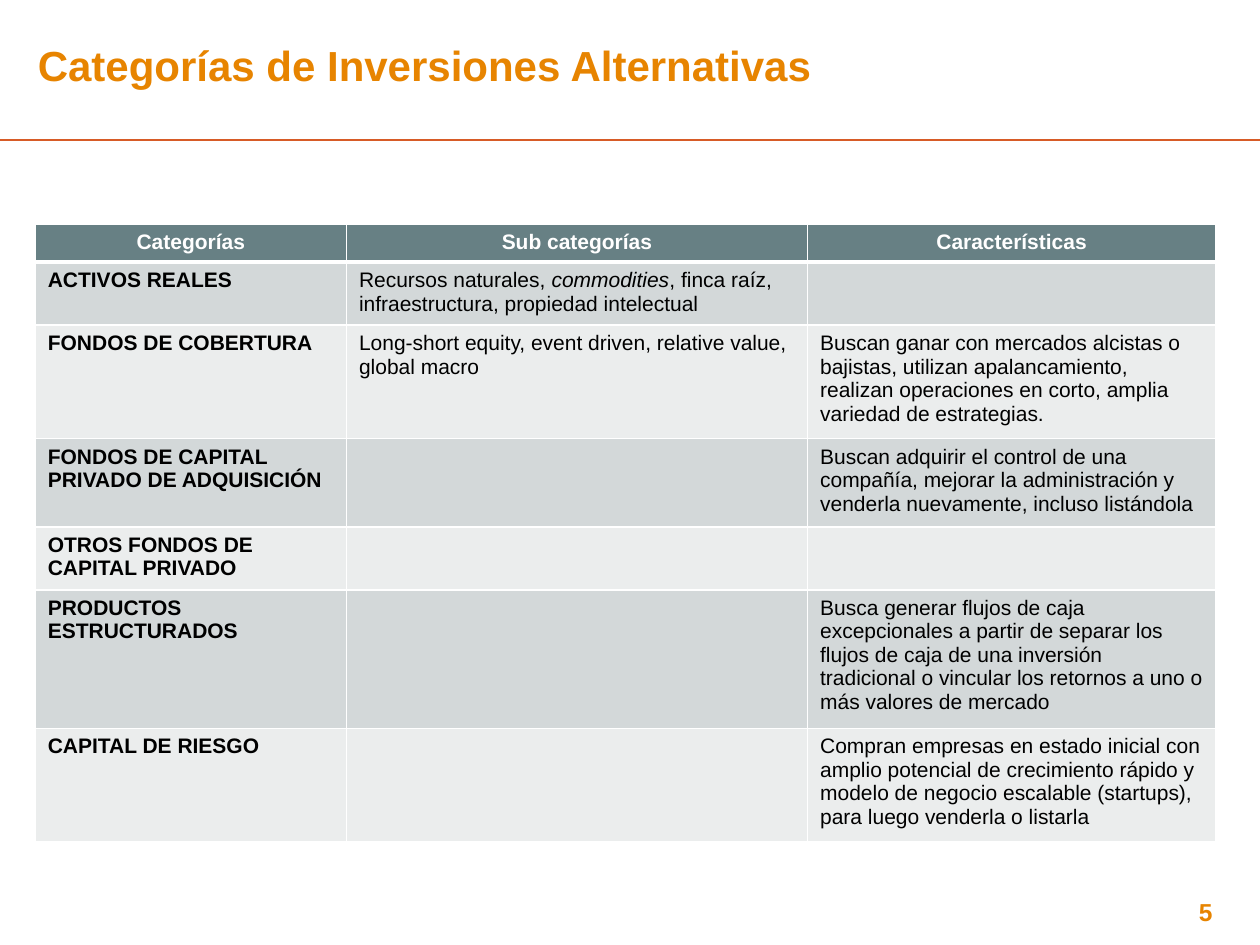
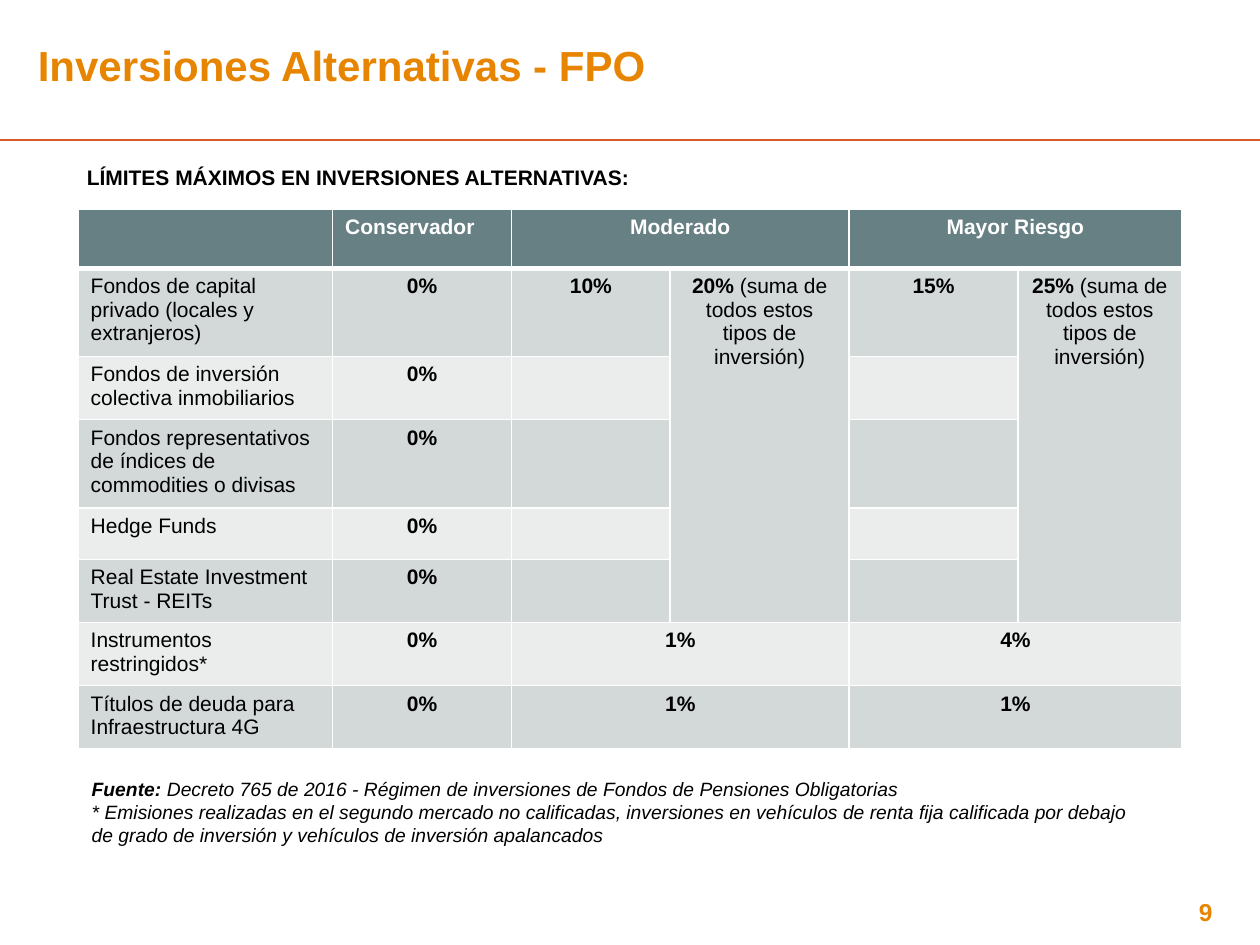
import pptx
import pptx.util
import pptx.dml.color
import pptx.enum.shapes
import pptx.enum.text
import pptx.oxml
import pptx.oxml.ns
from lxml import etree

COLORS = {
    "accent": "E78400",
    "rule": "D75B27",
    "header": "678084",
    "odd": "D3D8D9",
    "even": "EBEDED",
    "white": "FFFFFF",
    "black": "000000",
}
COLUMNS, ROWS = 100, 75
UNIT = pptx.util.Inches(10) // COLUMNS
ALIGN = pptx.enum.text.PP_ALIGN
ANCHOR = pptx.enum.text.MSO_ANCHOR

TITLE = {"size": 24, "bold": True, "color": "accent"}
PAGE_NUMBER = {"size": 14, "bold": True, "color": "accent"}
HEADER = {"size": 12, "bold": True, "color": "white"}
BODY = {"size": 12, "bold": False, "color": "black"}
STRONG = {**BODY, "bold": True}
NOTE = {"size": 11, "bold": False, "italic": True, "color": "black"}

CATEGORIES = [
    ["Categorías", "Sub categorías", "Características"],
    ["ACTIVOS REALES",
     [("Recursos naturales, ", {}), ("commodities", {"italic": True}),
      (", finca raíz, infraestructura, propiedad intelectual", {})], ""],
    ["FONDOS DE COBERTURA",
     "Long-short equity, event driven, relative value, global macro",
     "Buscan ganar con mercados alcistas o bajistas, utilizan apalancamiento, "
     "realizan operaciones en corto, amplia variedad de estrategias."],
    ["FONDOS DE CAPITAL PRIVADO DE ADQUISICIÓN", "",
     "Buscan adquirir el control de una compañía, mejorar la administración y "
     "venderla nuevamente, incluso listándola"],
    ["OTROS FONDOS DE CAPITAL PRIVADO", "", ""],
    ["PRODUCTOS ESTRUCTURADOS", "",
     "Busca generar flujos de caja excepcionales a partir de separar los flujos "
     "de caja de una inversión tradicional o vincular los retornos a uno o más "
     "valores de mercado"],
    ["CAPITAL DE RIESGO", "",
     "Compran empresas en estado inicial con amplio potencial de crecimiento "
     "rápido y modelo de negocio escalable (startups), para luego venderla o "
     "listarla"],
]


def combined_limit(percentage):
    return [(percentage, {}),
            (" (suma de todos estos tipos de inversión)", {"bold": False})]


LIMITS = [
    ["", "Conservador", "Moderado", "", "Mayor Riesgo", ""],
    ["Fondos de capital privado (locales y extranjeros)", "0%",
     "10%", combined_limit("20%"), "15%", combined_limit("25%")],
    ["Fondos de inversión colectiva inmobiliarios", "0%", "", "", "", ""],
    ["Fondos representativos de índices de commodities o divisas", "0%",
     "", "", "", ""],
    ["Hedge Funds", "0%", "", "", "", ""],
    ["Real Estate Investment Trust - REITs", "0%", "", "", "", ""],
    ["Instrumentos restringidos*", "0%", "1%", "", "4%", ""],
    ["Títulos de deuda para Infraestructura 4G", "0%", "1%", "", "1%", ""],
]
LIMIT_PROFILES = (2, 4)
LIMIT_WIDE_ROWS = (0, 6, 7)
SOURCE_NOTES = [
    [("Fuente: ", {"bold": True}),
     ("Decreto 765 de 2016 - Régimen de inversiones de Fondos de Pensiones "
      "Obligatorias", {})],
    "* Emisiones realizadas en el segundo mercado no calificadas, inversiones en "
    "vehículos de renta fija calificada por debajo de grado de inversión y "
    "vehículos de inversión apalancados",
]


def grid(*cells):
    """Turn counts of grid columns or rows into lengths."""
    return [round(cell * UNIT) for cell in cells]


def rgb(name):
    return pptx.dml.color.RGBColor.from_string(COLORS[name])


def write(paragraph, content, style, alignment=ALIGN.LEFT):
    """Fill a paragraph with a string or a list of (text, format changes)."""
    paragraph.alignment = alignment
    runs = [(content, {})] if isinstance(content, str) else content
    for text, changes in runs:
        run = paragraph.add_run()
        run.text = text
        values = {"name": "Arial", **style, **changes}
        run.font.color.rgb = rgb(values.pop("color"))
        values["size"] = pptx.util.Pt(values["size"])
        for attribute, value in values.items():
            setattr(run.font, attribute, value)


def add_text(slide, area, paragraphs, style, alignment=ALIGN.LEFT):
    frame = slide.shapes.add_textbox(*grid(*area)).text_frame
    frame.word_wrap = True
    for index, content in enumerate(paragraphs):
        paragraph = frame.add_paragraph() if index else frame.paragraphs[0]
        write(paragraph, content, style, alignment)


def add_rule(slide, row):
    start, end, height = grid(0, COLUMNS, row)
    rule = slide.shapes.add_connector(
        pptx.enum.shapes.MSO_CONNECTOR.STRAIGHT, start, height, end, height)
    rule.line.color.rgb = rgb("rule")
    rule.line.width = pptx.util.Pt(1)
    etree.SubElement(rule._element.spPr, pptx.oxml.ns.qn("a:effectLst"))


def format_title(title, text):
    title.left, title.top, title.width, title.height = grid(0, 3.1, 99.8, 4.5)
    frame = title.text_frame
    settings = {"word_wrap": True, "vertical_anchor": ANCHOR.MIDDLE,
                "auto_size": pptx.enum.text.MSO_AUTO_SIZE.NONE}
    for attribute, value in settings.items():
        setattr(frame, attribute, value)
    paragraph = frame.paragraphs[0]
    paragraph.line_spacing = 0.9
    properties = paragraph._p.get_or_add_pPr()
    properties.set("marL", str(2 * UNIT))
    properties.set("indent", "0")
    write(paragraph, text, TITLE)


def add_titled_slide(presentation, title, number):
    slide = presentation.slides.add_slide(presentation.slide_layouts[5])
    add_rule(slide, 11.1)
    format_title(slide.shapes.title, title)
    add_text(slide, (91.8, 70.7, 7.8, 4), [number], PAGE_NUMBER, ALIGN.CENTER)
    return slide


def add_borders(cell, widths):
    """Draw white borders, with widths in points by side (L, R, T, B)."""
    properties = cell._tc.get_or_add_tcPr()
    for side, width in widths.items():
        properties.append(pptx.oxml.parse_xml(
            f'<a:ln{side} {pptx.oxml.ns.nsdecls("a")} w="{pptx.util.Pt(width)}">'
            f'<a:solidFill><a:srgbClr val="{COLORS["white"]}"/></a:solidFill>'
            f'</a:ln{side}>'))


def add_table(slide, corner, widths, heights, contents, cell_style):
    """Add a banded table; cell_style gives text format and alignment."""
    area = grid(*corner, sum(widths), sum(heights))
    table = slide.shapes.add_table(len(heights), len(widths), *area).table
    for column, width in zip(table.columns, grid(*widths)):
        column.width = width
    for row, height in zip(table.rows, grid(*heights)):
        row.height = height
    for row_index, row in enumerate(contents):
        band = "header" if row_index == 0 else ("even", "odd")[row_index % 2]
        for column_index, content in enumerate(row):
            cell = table.cell(row_index, column_index)
            top = 3 if row_index == 1 else 1
            bottom = 3 if row_index == 0 else 1
            add_borders(cell, {"L": 1, "R": 1, "T": top, "B": bottom})
            cell.fill.solid()
            cell.fill.fore_color.rgb = rgb(band)
            if content:
                style, alignment = cell_style(row_index, column_index)
                write(cell.text_frame.paragraphs[0], content, style, alignment)
    return table


def category_style(row, column):
    if row == 0:
        return HEADER, ALIGN.CENTER
    return (BODY if column else STRONG), ALIGN.LEFT


def limit_style(row, column):
    if row == 0:
        return HEADER, ALIGN.LEFT if column == 1 else ALIGN.CENTER
    return (STRONG, ALIGN.CENTER) if column else (BODY, ALIGN.LEFT)


def merge_limits(table):
    for column in LIMIT_PROFILES:
        for row in LIMIT_WIDE_ROWS:
            table.cell(row, column).merge(table.cell(row, column + 1))
        table.cell(1, column + 1).merge(table.cell(5, column + 1))


def build_categories(presentation):
    slide = add_titled_slide(
        presentation, "Categorías de Inversiones Alternativas", "5")
    add_table(slide, (2.8, 17.8), (24.7, 36.6, 32.4),
              (2.9, 4.7, 8.5, 6.6, 4.8, 10.3, 8.4), CATEGORIES, category_style)


def build_limits(presentation):
    slide = add_titled_slide(presentation, "Inversiones Alternativas - FPO", "9")
    table = add_table(slide, (6.2, 16.6), (20.2, 14.2, 12.6, 14.2, 13.4, 13),
                      (4.7, 6.6, 4.7, 6.6, 4.1, 4.7, 4.8, 4.7),
                      LIMITS, limit_style)
    merge_limits(table)
    add_text(slide, (6.3, 61.2, 86.3, 3.9), SOURCE_NOTES, NOTE)
    add_text(slide, (5.9, 12.6, 51.2, 3.9),
             ["LÍMITES MÁXIMOS EN INVERSIONES ALTERNATIVAS:"], STRONG)


def main():
    presentation = pptx.Presentation()
    presentation.slide_width, presentation.slide_height = grid(COLUMNS, ROWS)
    build_categories(presentation)
    build_limits(presentation)
    presentation.save("out.pptx")


if __name__ == "__main__":
    main()
